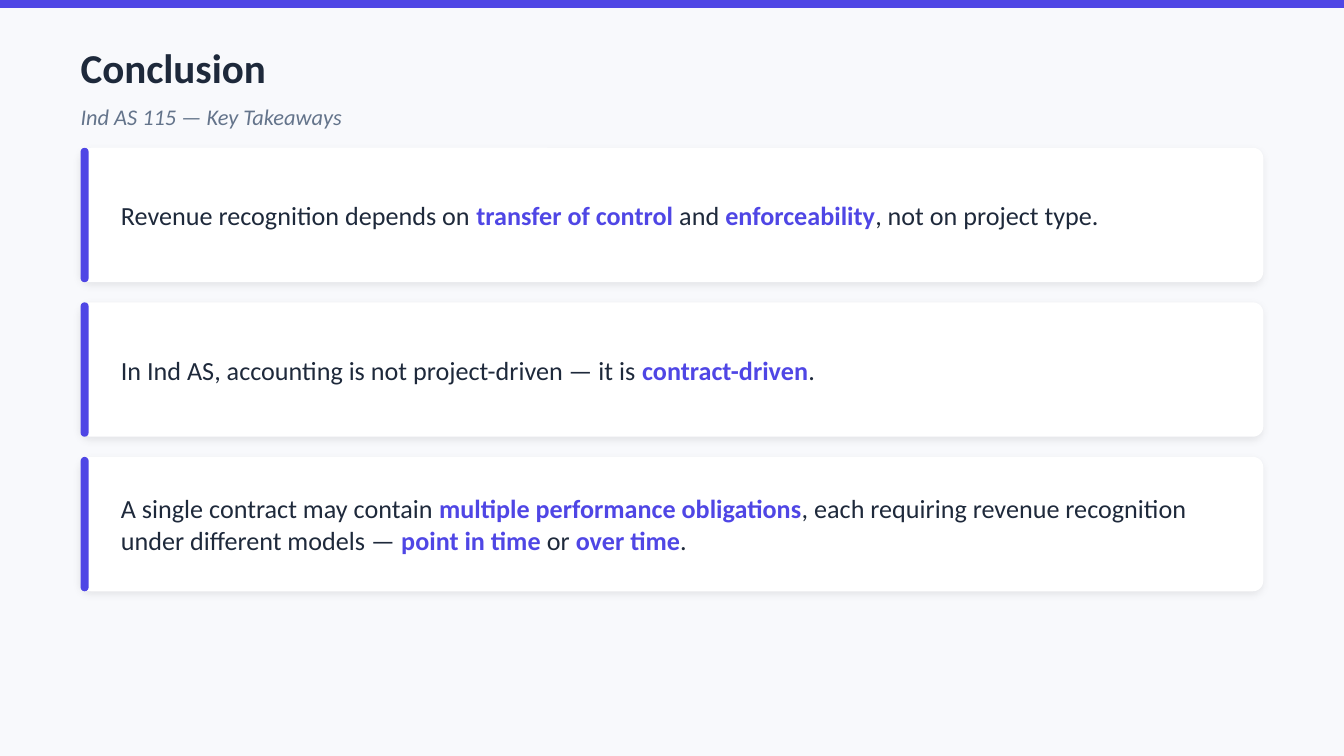
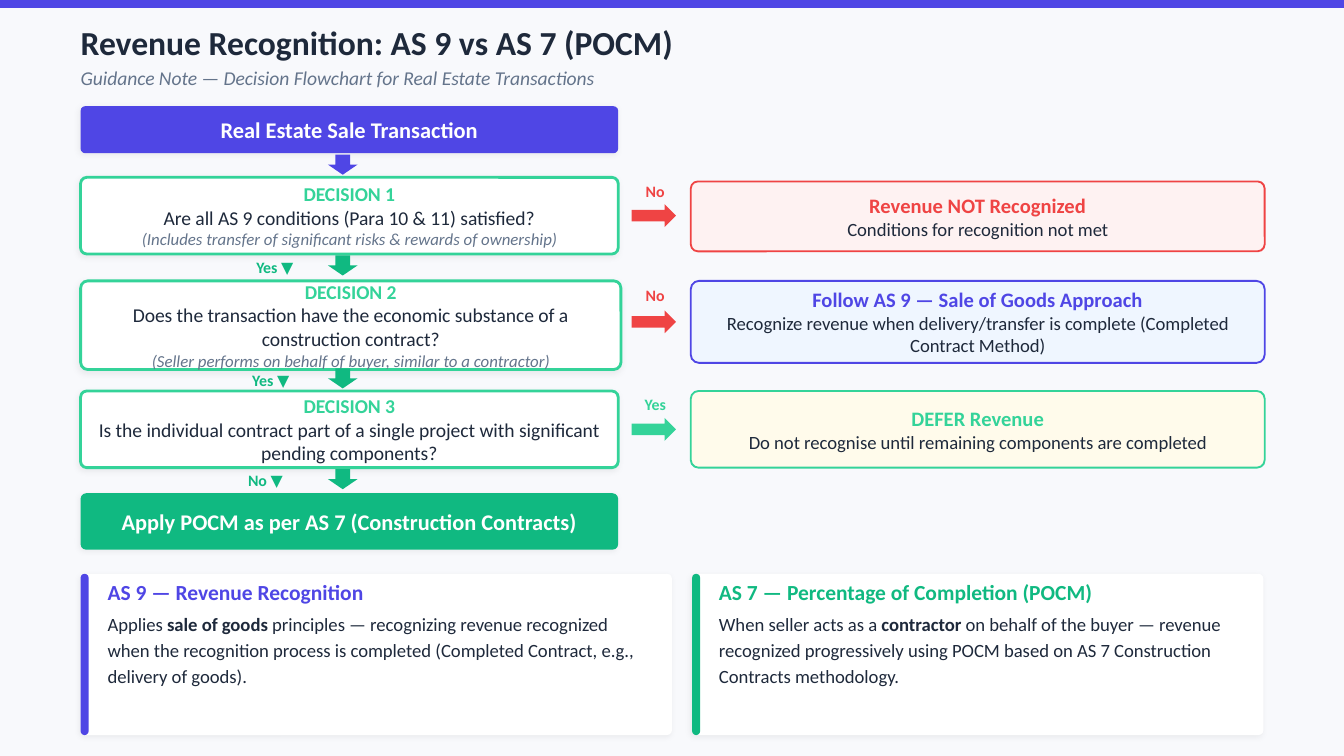
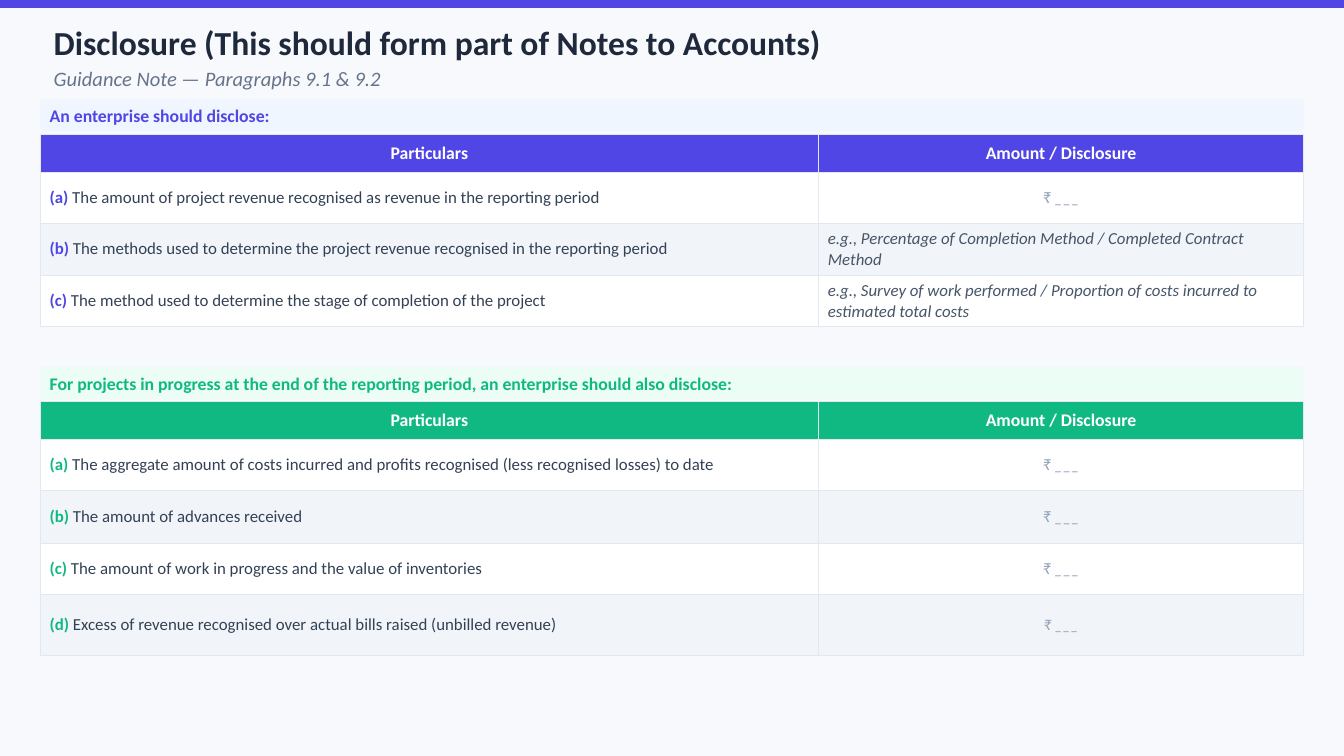
from lxml import etree
from pptx import Presentation
from pptx.dml.color import RGBColor
from pptx.enum.shapes import MSO_SHAPE
from pptx.enum.text import MSO_ANCHOR, PP_ALIGN
from pptx.oxml import parse_xml
from pptx.oxml.ns import nsdecls, qn
from pptx.util import Pt

RECT = MSO_SHAPE.RECTANGLE
ROUND = MSO_SHAPE.ROUNDED_RECTANGLE
DOWN = MSO_SHAPE.DOWN_ARROW
RIGHT = MSO_SHAPE.RIGHT_ARROW
TOP, MIDDLE = MSO_ANCHOR.TOP, MSO_ANCHOR.MIDDLE
LEFT, CENTER = PP_ALIGN.LEFT, PP_ALIGN.CENTER

PX = 9144
FONT = "Calibri"
C = {
    "page": "F8F9FC", "indigo": "4F46E5", "green": "10B981", "mint": "34D399",
    "red": "EF4444", "white": "FFFFFF", "ink": "1E293B", "muted": "64748B",
    "body": "334155", "example": "475569", "blank": "94A3B8", "border": "E2E8F0",
    "stripe": "F1F5F9", "pale_red": "FEF2F2", "pale_blue": "EFF6FF",
    "pale_yellow": "FFFBEB", "pale_green": "ECFDF5",
}
SOFT = (6, 3.1, 1.2)


def px(n):
    return n * PX


def rgb(name):
    return RGBColor.from_string(C[name])


def set_frame(tf, anchor=MIDDLE, margins=(0, 0)):
    tf.word_wrap = True
    tf.vertical_anchor = anchor
    tf.margin_left = tf.margin_right = px(margins[0])
    tf.margin_top = tf.margin_bottom = px(margins[1])


def add_par(tf, text, size, color, bold=False, italic=False, align=LEFT,
            accent=None, after=None, line=None):
    p = tf.paragraphs[0]
    if p.runs:
        p = tf.add_paragraph()
    p.alignment = align
    if after is not None:
        p.space_after = Pt(after)
    if line is not None:
        p.line_spacing = Pt(line)
    p.font.name = FONT
    p.font.size = Pt(size)
    p.font.bold = bold
    p.font.italic = italic
    p.font.color.rgb = rgb(color)
    for i, part in enumerate(text.split("**")):
        if part:
            r = p.add_run()
            r.text = part
            if i % 2:
                r.font.bold = True
                r.font.color.rgb = rgb(accent or color)


def add_text(s, x, y, w, h, anchor=MIDDLE):
    tf = s.shapes.add_textbox(px(x), px(y), px(w), px(h)).text_frame
    set_frame(tf, anchor)
    return tf


def add_shadow(sp, alpha, blur, dist):
    effects = sp._element.spPr.find(qn("a:effectLst"))
    shadow = etree.SubElement(effects, qn("a:outerShdw"), blurRad=str(Pt(blur)),
                              dist=str(Pt(dist)), dir=str(135 * 60000),
                              algn="bl", rotWithShape="0")
    color = etree.SubElement(shadow, qn("a:srgbClr"), val="000000")
    etree.SubElement(color, qn("a:alpha"), val=str(alpha * 1000))


def add_box(s, kind, x, y, w, h, fill, line=None, width=1, radius=None, shadow=None):
    sp = s.shapes.add_shape(kind, px(x), px(y), px(w), px(h))
    sp.shadow.inherit = False
    sp.fill.solid()
    sp.fill.fore_color.rgb = rgb(fill)
    if line:
        sp.line.color.rgb = rgb(line)
        sp.line.width = Pt(width)
    else:
        sp.line.fill.background()
    if radius is not None:
        sp.adjustments[0] = radius
    if shadow:
        add_shadow(sp, *shadow)
    return sp


def add_slide(prs, title, title_at, title_size, subtitle, subtitle_at, subtitle_size):
    s = prs.slides.add_slide(prs.slide_layouts[6])
    s.background.fill.solid()
    s.background.fill.fore_color.rgb = rgb("page")
    add_box(s, RECT, 0, 0, 1000, 6, "indigo")
    add_par(add_text(s, *title_at), title, title_size, "ink", bold=True)
    add_par(add_text(s, *subtitle_at), subtitle, subtitle_size, "muted", italic=True)
    return s


def add_card(s, x, y, w, h, accent, radius, shadow):
    add_box(s, ROUND, x, y, w, h, "white", radius=radius, shadow=shadow)
    add_box(s, ROUND, x, y, 6, h, accent, radius=0.5)


def add_banner(s, y, h, fill, text):
    sp = add_box(s, ROUND, 60, y, 400, h, fill, radius=0.1, shadow=SOFT)
    set_frame(sp.text_frame, margins=(10, 4))
    add_par(sp.text_frame, text, 12, "white", bold=True, align=CENTER)


def add_decision(s, number, y, w, h, question, note):
    sp = add_box(s, ROUND, 60, y, w, h, "white", "mint", 1.5, 0.08, SOFT)
    tf = sp.text_frame
    set_frame(tf, margins=(10, 4))
    add_par(tf, f"DECISION {number}", 10.5, "mint", bold=True, align=CENTER)
    add_par(tf, question, 10.5, "ink", align=CENTER)
    if note:
        add_par(tf, note, 9, "muted", italic=True, align=CENTER)


def add_label(s, x, y, w, text, color):
    add_par(add_text(s, x, y, w, 19), text, 8.5, color, bold=True, align=CENTER)


def add_outcome(s, y, h, arrow_y, label_y, answer, arrow, fill, color, title, detail):
    add_box(s, RIGHT, 470, arrow_y, 33, 17, arrow)
    add_label(s, 472, label_y, 31, answer, arrow)
    sp = add_box(s, ROUND, 514, y, 427, h, fill, color, 1, 0.1)
    set_frame(sp.text_frame, margins=(10, 4))
    add_par(sp.text_frame, title, 11, color, bold=True, align=CENTER)
    add_par(sp.text_frame, detail, 10, "ink", align=CENTER)


def add_down_step(s, y, color, label=None, label_x=None):
    if label:
        add_label(s, label_x, y - 1, 59, label, color)
    add_box(s, DOWN, 244, y, 22, 15, color)


def add_standard(s, x, w, color, title, text):
    add_card(s, x, 427, w, 120, color, 0.03, SOFT)
    tf = add_text(s, x + 20, 431, w - 35, 112, TOP)
    add_par(tf, title, 11.5, color, bold=True, after=2)
    add_par(tf, text, 10, "ink", line=14)


def style_cell(cell, fill):
    tcPr = cell._tc.get_or_add_tcPr()
    for side in ("lnL", "lnR", "lnT", "lnB"):
        tcPr.append(parse_xml(
            f'<a:{side} {nsdecls("a")} w="{Pt(0.5)}"><a:solidFill>'
            f'<a:srgbClr val="{C["border"]}"/></a:solidFill></a:{side}>'))
    cell.fill.solid()
    cell.fill.fore_color.rgb = rgb(fill)
    cell.vertical_anchor = MIDDLE
    cell.margin_left = cell.margin_right = px(7)
    cell.margin_top = cell.margin_bottom = px(4)
    return cell.text_frame


def add_disclosure(s, y, color, tint, heading, heights, items):
    sp = add_box(s, RECT, 30, y, 940, 24, tint)
    set_frame(sp.text_frame, margins=(7, 4))
    add_par(sp.text_frame, heading, 9.5, color, bold=True)

    table = s.shapes.add_table(len(heights), 2, px(30), px(y + 26),
                               px(940), px(sum(heights))).table
    table.first_row = table.horz_banding = False
    for col, width in zip(table.columns, (579, 361)):
        col.width = px(width)
    for row, height in zip(table.rows, heights):
        row.height = px(height)
    for i, name in enumerate(("Particulars", "Amount / Disclosure")):
        add_par(style_cell(table.cell(0, i), color), name, 9.5, "white",
                bold=True, align=CENTER)
    for i, (text, example) in enumerate(items, 1):
        fill = "white" if i % 2 else "stripe"
        add_par(style_cell(table.cell(i, 0), fill), f"**({'abcd'[i - 1]})** {text}",
                9, "body", accent=color)
        tf = style_cell(table.cell(i, 1), fill)
        if example:
            add_par(tf, example, 9, "example", italic=True)
        else:
            add_par(tf, "₹ ___", 8.5 if i == 4 else 9, "blank", italic=True, align=CENTER)


def conclusion(prs):
    s = add_slide(prs, "Conclusion", (60, 25, 880, 50), 22,
                  "Ind AS 115 — Key Takeaways", (60, 72, 880, 30), 12)
    takeaways = (
        "Revenue recognition depends on **transfer of control** and "
        "**enforceability**, not on project type.",
        "In Ind AS, accounting is not project-driven — it is **contract-driven**.",
        "A single contract may contain **multiple performance obligations**, each requiring "
        "revenue recognition under different models — **point in time** or **over time**.",
    )
    for i, text in enumerate(takeaways):
        y = 110 + 115 * i
        add_card(s, 60, y, 880, 100, "indigo", 0.077, (8, 4, 1.5))
        add_par(add_text(s, 90, y + 5, 820, 90), text, 14, "ink", accent="indigo")


def flowchart(prs):
    s = add_slide(prs, "Revenue Recognition: AS 9 vs AS 7 (POCM)", (60, 11, 880, 40), 18,
                  "Guidance Note — Decision Flowchart for Real Estate Transactions",
                  (60, 47, 880, 22), 10.5)
    add_banner(s, 79, 35, "indigo", "Real Estate Sale Transaction")
    add_down_step(s, 115, "indigo")
    decisions = (
        (132, 400, 57, "Are all AS 9 conditions (Para 10 & 11) satisfied?",
         "(Includes transfer of significant risks & rewards of ownership)"),
        (209, 402, 66,
         "Does the transaction have the economic substance of a construction contract?",
         "(Seller performs on behalf of buyer, similar to a contractor)"),
        (291, 400, 57, "Is the individual contract part of a single project with "
         "significant pending components?", None),
    )
    outcomes = (
        (135, 52, 152, 133, "No", "red", "pale_red", "red",
         "Revenue NOT Recognized", "Conditions for recognition not met"),
        (209, 61, 231, 210, "No", "red", "pale_blue", "indigo",
         "Follow AS 9 — Sale of Goods Approach",
         "Recognize revenue when delivery/transfer is complete (Completed Contract Method)"),
        (291, 57, 311, 291, "Yes", "mint", "pale_yellow", "mint",
         "DEFER Revenue", "Do not recognise until remaining components are completed"),
    )
    steps = ((190, "Yes ▼", 175), (274, "Yes ▼", 172), (349, "No ▼", 168))
    for i, (decision, outcome, step) in enumerate(zip(decisions, outcomes, steps), 1):
        add_decision(s, i, *decision)
        add_outcome(s, *outcome)
        y, label, label_x = step
        add_down_step(s, y, "green", label, label_x)
    add_banner(s, 367, 42, "green", "Apply POCM as per AS 7 (Construction Contracts)")
    add_standard(s, 60, 440, "indigo", "AS 9 — Revenue Recognition",
                 "Applies **sale of goods** principles — recognizing revenue recognized when "
                 "the recognition process is completed (Completed Contract, e.g., "
                 "delivery of goods).")
    add_standard(s, 515, 425, "green", "AS 7 — Percentage of Completion (POCM)",
                 "When seller acts as a **contractor** on behalf of the buyer — revenue "
                 "recognized progressively using POCM based on AS 7 Construction "
                 "Contracts methodology.")


def disclosure(prs):
    s = add_slide(prs, "Disclosure (This should form part of Notes to Accounts)",
                  (40, 12, 920, 38), 18,
                  "Guidance Note — Paragraphs 9.1 & 9.2", (40, 48, 920, 20), 11)
    add_disclosure(s, 74, "indigo", "pale_blue", "An enterprise should disclose:",
                   (28, 38, 39, 38), (
        ("The amount of project revenue recognised as revenue in the reporting period", None),
        ("The methods used to determine the project revenue recognised in the reporting period",
         "e.g., Percentage of Completion Method / Completed Contract Method"),
        ("The method used to determine the stage of completion of the project",
         "e.g., Survey of work performed / Proportion of costs incurred to "
         "estimated total costs"),
    ))
    add_disclosure(s, 273, "green", "pale_green",
                   "For projects in progress at the end of the reporting period, "
                   "an enterprise should also disclose:",
                   (28, 38, 39, 38, 46), (
        ("The aggregate amount of costs incurred and profits recognised "
         "(less recognised losses) to date", None),
        ("The amount of advances received", None),
        ("The amount of work in progress and the value of inventories", None),
        ("Excess of revenue recognised over actual bills raised (unbilled revenue)", None),
    ))


def main():
    prs = Presentation()
    prs.slide_width = px(1000)
    prs.slide_height = prs.slide_width * 9 // 16
    conclusion(prs)
    flowchart(prs)
    disclosure(prs)
    prs.save("out.pptx")


if __name__ == "__main__":
    main()
